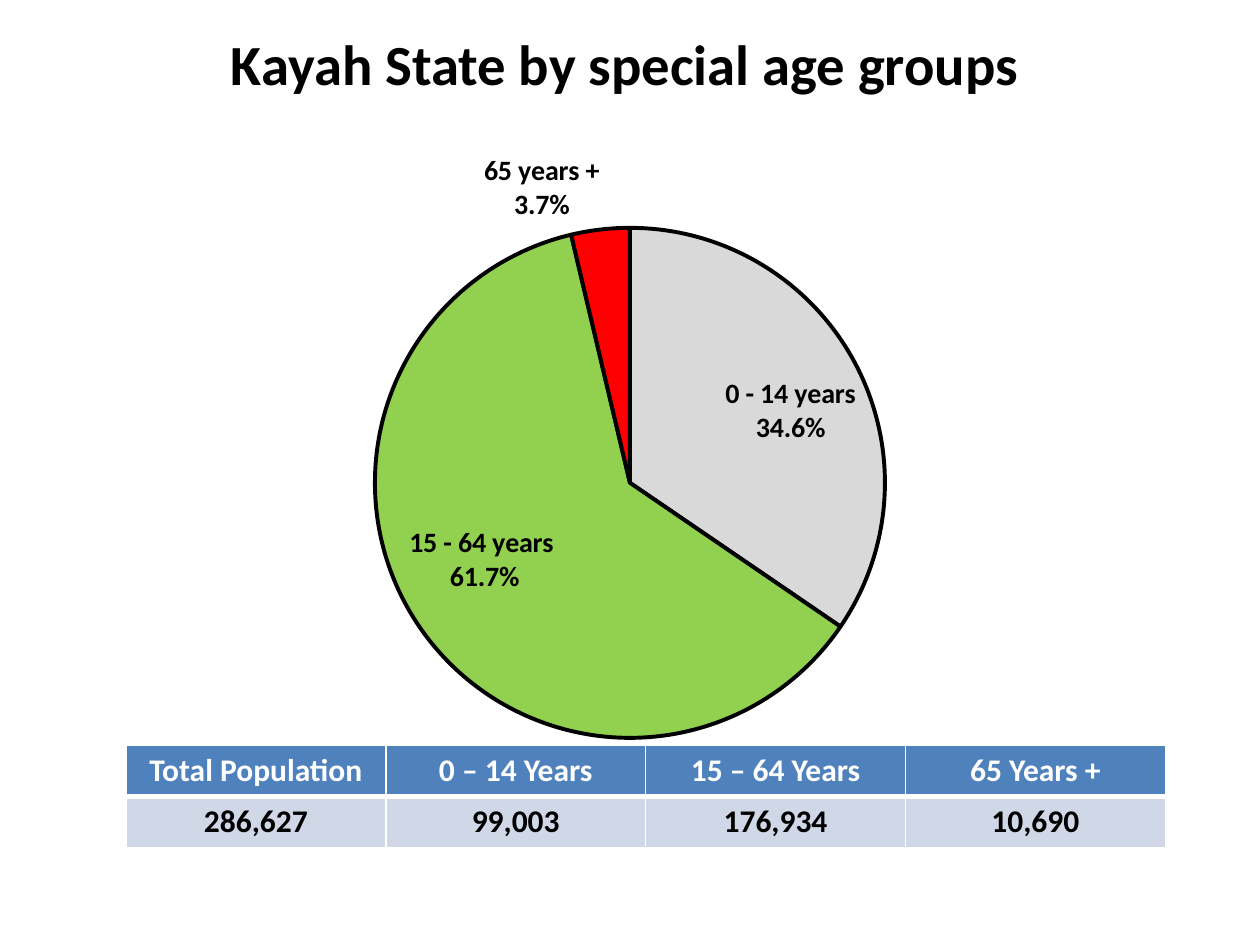
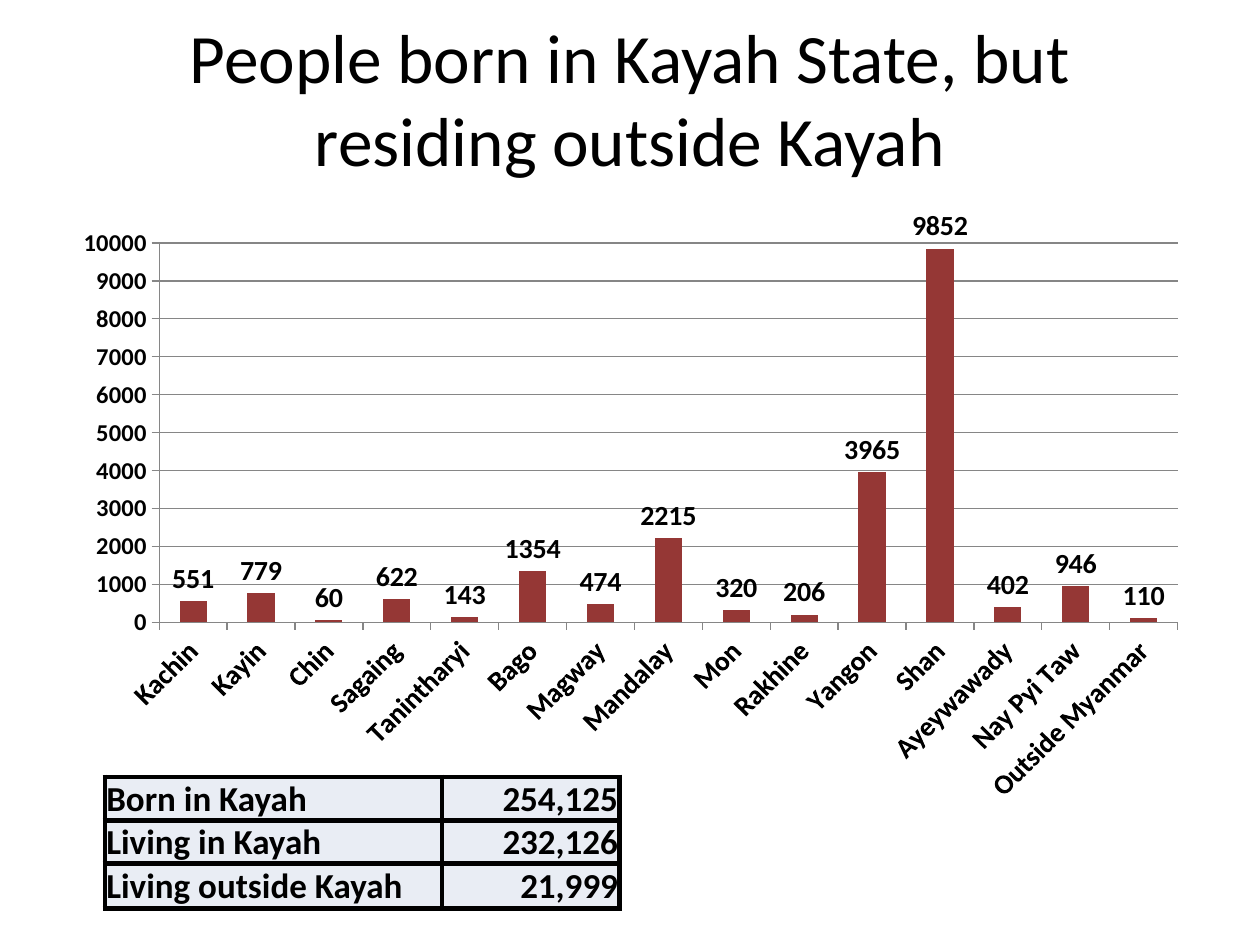
"""Two slides on the population of Kayah State: age groups and people living outside."""
from lxml import etree
from pptx import Presentation
from pptx.chart.data import CategoryChartData
from pptx.dml.color import RGBColor
from pptx.enum.chart import XL_CHART_TYPE, XL_LABEL_POSITION, XL_TICK_MARK
from pptx.enum.text import MSO_ANCHOR, PP_ALIGN
from pptx.oxml import parse_xml
from pptx.oxml.ns import nsdecls, qn
from pptx.util import Pt

FONT = "Calibri"
BLACK = RGBColor(0x00, 0x00, 0x00)
WHITE = RGBColor(0xFF, 0xFF, 0xFF)
BLUE = RGBColor(0x4F, 0x81, 0xBD)
PALE_BLUE = RGBColor(0xD0, 0xD8, 0xE8)
PALE_GREY = RGBColor(0xE9, 0xED, 0xF4)
AXIS_GREY = RGBColor(0x86, 0x86, 0x86)
GREY = RGBColor(0xD9, 0xD9, 0xD9)
GREEN = RGBColor(0x92, 0xD0, 0x50)
RED = RGBColor(0xFF, 0x00, 0x00)
MAROON = RGBColor(0x95, 0x37, 0x35)


def add_title(s, text, left, top, width, height, size, bold):
    tf = s.shapes.add_textbox(Pt(left), Pt(top), Pt(width), Pt(height)).text_frame
    tf.word_wrap = True
    tf.vertical_anchor = MSO_ANCHOR.MIDDLE
    p = tf.paragraphs[0]
    p.text = text
    p.alignment = PP_ALIGN.CENTER
    p.font.name, p.font.size, p.font.bold = FONT, Pt(size), bold
    p.font.color.rgb = BLACK


def style_cell(cell, text, size, color, fill, align, border, widths):
    cell.fill.solid()
    cell.fill.fore_color.rgb = fill
    p = cell.text_frame.paragraphs[0]
    p.text = text
    p.alignment = align
    p.font.name, p.font.size, p.font.bold = FONT, Pt(size), True
    p.font.color.rgb = color
    tc_pr = cell._tc.get_or_add_tcPr()
    for i, (side, width) in enumerate(zip("LRTB", widths)):
        ln = etree.Element(qn(f"a:ln{side}"), w=str(Pt(width)))
        solid = etree.SubElement(ln, qn("a:solidFill"))
        etree.SubElement(solid, qn("a:srgbClr"), val=str(border))
        tc_pr.insert(i, ln)


prs = Presentation()
prs.slide_width, prs.slide_height = Pt(720), Pt(540)
blank = prs.slide_layouts[6]

s = prs.slides.add_slide(blank)
add_title(s, "Kayah State by special age groups", 12, 12, 690, 48, 32.4, True)

rows = [
    ["Total Population", "0 – 14 Years", "15 – 64 Years", "65 Years +"],
    ["286,627", "99,003", "176,934", "10,690"],
]
row_styles = [(WHITE, BLUE, (1, 1, 1, 3)), (BLACK, PALE_BLUE, (1, 1, 3, 1))]
table = s.shapes.add_table(2, 4, Pt(72), Pt(426), Pt(594), Pt(58.4)).table
for r, (texts, (color, fill, widths)) in enumerate(zip(rows, row_styles)):
    for c, text in enumerate(texts):
        style_cell(table.cell(r, c), text, 18, color, fill, PP_ALIGN.CENTER, WHITE, widths)

data = CategoryChartData(number_format="0.0%")
data.categories = ["0 - 14", "15 - 64", "65+"]
data.add_series("Series 1", [0.345, 0.617, 0.037])
pie_frame = s.shapes.add_chart(XL_CHART_TYPE.PIE, Pt(36), Pt(78), Pt(648), Pt(354), data)
series = pie_frame.chart.plots[0].series[0]
labels = series.data_labels
labels.show_value = labels.show_category_name = True
labels.number_format, labels.number_format_is_linked = "0.0%", False
labels.font.size, labels.font.bold = Pt(16), True
slices = [
    (GREY, "0 - 14 years\n34.6%", XL_LABEL_POSITION.INSIDE_END, 4, 5.5),
    (GREEN, "15 - 64 years \n61.7%", XL_LABEL_POSITION.INSIDE_END, -9.5, -16.5),
    (RED, "65 years +\n3.7%", XL_LABEL_POSITION.OUTSIDE_END, 0, 0),
]
for i, (color, text, position, dx, dy) in enumerate(slices):
    point = series.points[i]
    point.format.fill.solid()
    point.format.fill.fore_color.rgb = color
    point.format.line.color.rgb = BLACK
    point.format.line.width = Pt(2.25)
    tf = point.data_label.text_frame
    tf.text = text
    for p in tf.paragraphs:
        font = p.runs[0].font
        font.name, font.size, font.bold = FONT, Pt(16), True
        font.color.rgb = BLACK
    point.data_label.position = position
    label = labels._element.findall(qn("c:dLbl"))[i]
    label.find(qn("c:showCatName")).set("val", "1")
    if dx or dy:
        label.insert(1, parse_xml(
            f'<c:layout {nsdecls("c")}><c:manualLayout><c:x val="{dx / 648}"/>'
            f'<c:y val="{dy / 354}"/></c:manualLayout></c:layout>'))

s = prs.slides.add_slide(blank)
add_title(s, "People born in Kayah State, but residing outside Kayah", 36, 21.5, 648, 68, 39.6, False)

residents = {
    "Kachin": 551, "Kayin": 779, "Chin": 60, "Sagaing": 622, "Tanintharyi": 143,
    "Bago": 1354, "Magway": 474, "Mandalay": 2215, "Mon": 320, "Rakhine": 206,
    "Yangon": 3965, "Shan": 9852, "Ayeywawady": 402, "Nay Pyi Taw": 946,
    "Outside Myanmar": 110,
}
data = CategoryChartData()
data.categories = list(residents)
data.add_series("Series 1", list(residents.values()))
column_frame = s.shapes.add_chart(
    XL_CHART_TYPE.COLUMN_CLUSTERED, Pt(36), Pt(120), Pt(648), Pt(396), data)
columns = column_frame.chart
plot = columns.plots[0]
plot.gap_width = 150
plot.vary_by_categories = False
series = plot.series[0]
series.format.fill.solid()
series.format.fill.fore_color.rgb = MAROON
labels = series.data_labels
labels.show_value = True
labels.position = XL_LABEL_POSITION.OUTSIDE_END
labels.font.size, labels.font.bold = Pt(16), True

value_axis = columns.value_axis
value_axis.minimum_scale, value_axis.maximum_scale = 0, 10000
value_axis.major_unit = 1000
value_axis.has_major_gridlines = True
value_axis.major_gridlines.format.line.color.rgb = AXIS_GREY
value_axis.major_gridlines.format.line.width = Pt(0.75)
for axis, size in [(columns.category_axis, 16), (value_axis, 14)]:
    axis.major_tick_mark = XL_TICK_MARK.OUTSIDE
    axis.format.line.color.rgb = AXIS_GREY
    axis.format.line.width = Pt(0.75)
    axis.tick_labels.font.size, axis.tick_labels.font.bold = Pt(size), True
columns.category_axis._element.txPr.bodyPr.set("rot", "-2700000")

plot_areas = [(pie_frame, 178.25, 52.25, 291.5, 291.5), (column_frame, 55, 13.5, 582, 220)]
for frame, left, top, width, height in plot_areas:
    chart = frame.chart
    chart.has_legend = chart.has_title = False
    chart.font.name, chart.font.size = FONT, Pt(10)
    chart.font.color.rgb = BLACK
    area = chart._chartSpace.chart.plotArea
    for old in area.findall(qn("c:layout")):
        area.remove(old)
    area.insert(0, parse_xml(
        f'<c:layout {nsdecls("c")}><c:manualLayout><c:layoutTarget val="inner"/>'
        f'<c:xMode val="edge"/><c:yMode val="edge"/>'
        f'<c:x val="{Pt(left) / frame.width}"/><c:y val="{Pt(top) / frame.height}"/>'
        f'<c:w val="{Pt(width) / frame.width}"/><c:h val="{Pt(height) / frame.height}"/>'
        f'</c:manualLayout></c:layout>'))

rows = [
    ("Born in Kayah", "254,125", 24),
    ("Living in Kayah", "232,126", 24.5),
    ("Living outside Kayah", "21,999", 25.5),
]
table = s.shapes.add_table(3, 2, Pt(60), Pt(444), Pt(294), Pt(74)).table
table.columns[0].width, table.columns[1].width = Pt(192.5), Pt(101.5)
for r, (group, count, height) in enumerate(rows):
    table.rows[r].height = Pt(height)
    for c, (text, align) in enumerate([(group, PP_ALIGN.LEFT), (count, PP_ALIGN.RIGHT)]):
        cell = table.cell(r, c)
        style_cell(cell, text, 20, BLACK, PALE_GREY, align, BLACK, (3, 3, 3, 3))
        cell.vertical_anchor = MSO_ANCHOR.BOTTOM
        cell.margin_left = cell.margin_right = cell.margin_top = Pt(0.75)
        cell.margin_bottom = Pt(0)

prs.save("out.pptx")
